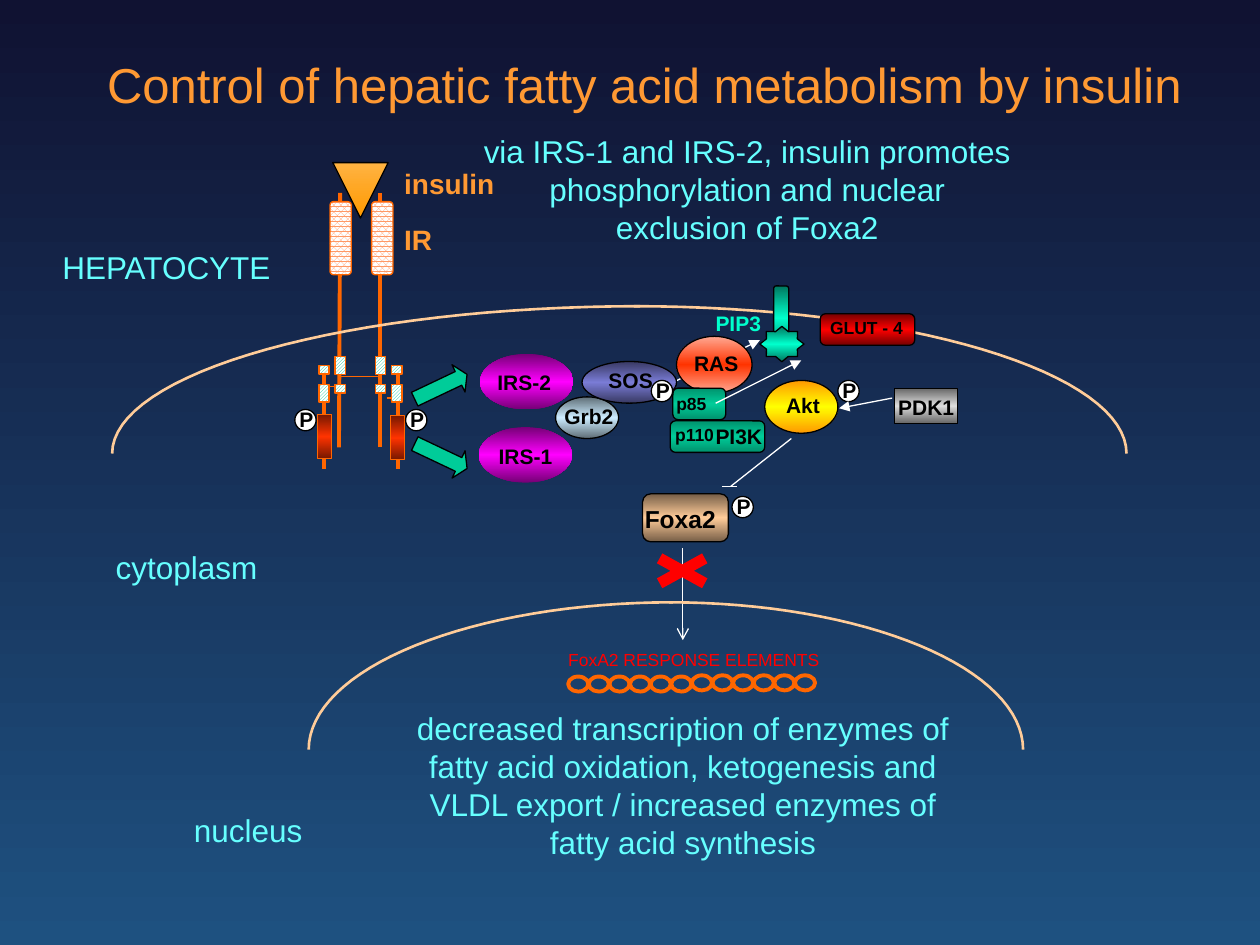
from copy import deepcopy
from math import cos, pi, sin

from lxml.etree import SubElement
from pptx import Presentation
from pptx.dml.color import RGBColor as RGB
from pptx.enum.dml import MSO_PATTERN as PATTERN
from pptx.enum.shapes import MSO_CONNECTOR as CONN, MSO_SHAPE as SH
from pptx.enum.text import MSO_ANCHOR as ANCHOR, MSO_AUTO_SIZE as AUTO, PP_ALIGN as ALIGN
from pptx.oxml.ns import qn
from pptx.util import Pt

C = {
    "navy": "101232", "blue": "1E5180", "title": "FF9933", "aqua": "66FFFF",
    "orange": "FF6600", "peach": "FFCC99", "black": "000000", "white": "FFFFFF",
    "red": "FF0000", "dark red": "760000", "rust": "761800", "scarlet": "FF3300",
    "salmon": "FFA892", "coral": "FF9966", "green": "00CC99", "dark green": "00926D",
    "mint": "00FFCC", "dark mint": "00765E", "purple": "760076", "magenta": "FF00FF",
    "slate": "5E6D76", "ice": "CCECFF", "indigo": "383963", "violet": "7A7CD6",
    "amber": "FF9900", "light amber": "FFB342", "yellow": "FFFF00",
    "gray": "666666", "silver": "DDDDDD", "brown": "765E47",
}
C = {name: RGB.from_string(code) for name, code in C.items()}


def write(sp, text, size=12, color="black", bold=True, align=ALIGN.LEFT, wrap=False):
    tf = sp.text_frame
    tf.word_wrap = wrap
    tf.auto_size = AUTO.SHAPE_TO_FIT_TEXT
    tf.vertical_anchor = ANCHOR.TOP
    p = tf.paragraphs[0]
    p.alignment = align
    r = p.add_run()
    r.text = text
    r.font.name, r.font.size, r.font.bold = "Arial", Pt(size), bold
    r.font.color.rgb = C[color]


def connect(x1, y1, x2, y2, color="white", width=0.75, arrow=None):
    line = s.shapes.add_connector(CONN.STRAIGHT, Pt(x1), Pt(y1), Pt(x2), Pt(y2))
    line.line.color.rgb = C[color]
    line.line.width = Pt(width)
    sppr = line._element.spPr
    if arrow:
        SubElement(sppr.find(qn("a:ln")), qn("a:tailEnd"), type=arrow)
    SubElement(sppr, qn("a:effectLst"))


prs = Presentation()
prs.slide_width, prs.slide_height = Pt(720), Pt(540)
s = prs.slides.add_slide(prs.slide_layouts[5])

# Background
bg = s.background.fill
bg.gradient()
bg.gradient_angle = 270
for stop, color, position in zip(bg.gradient_stops, ("navy", "blue"), (0, 1)):
    stop.color.rgb = C[color]
    stop.position = position

# Title
title = s.shapes.title
title.left, title.top, title.width, title.height = Pt(54), Pt(27.4), Pt(636.5), Pt(41)
write(title, "Control of hepatic fatty acid metabolism by insulin",
      size=28, color="title", bold=False)

# Receptor strands, and the arrows that run behind other shapes
for x1, y1, x2, y2, width in [
    (217.4, 255.6, 217.4, 110.2, 2.25), (193.7, 255.6, 194.4, 110.2, 2.25),
    (227.5, 208.8, 227.5, 267.8, 2.25), (185, 208.8, 185, 267.8, 2.25),
    (221, 227.5, 224.6, 227.5, 0.75), (187.9, 221, 191.5, 221, 0.75),
    (194.4, 215.3, 218.2, 215.3, 0.75),
]:
    connect(x1, y1, x2, y2, "orange", width)
connect(385.2, 218.2, 434.2, 194.4, arrow="triangle")
connect(390.2, 313.2, 390.2, 365.8, arrow="arrow")

# Cell and nuclear membranes: quarter ellipses (crown x, foot x, crown y)
STEPS, RISE = 32, 84.2
for crown, foot, top in [(365.8, 64.1, 175), (362.2, 643.7, 175),
                         (384.5, 176.4, 344.2), (382.3, 584.6, 344.2)]:
    points = [(Pt(crown + (foot - crown) * sin(a)), Pt(top + RISE * (1 - cos(a))))
              for a in (pi / 2 * i / STEPS for i in range(STEPS + 1))]
    builder = s.shapes.build_freeform(*points[0])
    builder.add_line_segments(points[1:], close=False)
    arc = builder.convert_to_shape()
    arc.shadow.inherit = False
    arc.fill.background()
    arc.line.color.rgb = C["peach"]
    arc.line.width = Pt(1.5)

# Shapes: kind, left, top, width, height, fill, line colour, line width, rotation, adjustments
# A fill is None, a colour, a list of gradient colours or a (pattern, fore, back) tuple
HATCH = (PATTERN.DARK_UPWARD_DIAGONAL, "green", "white")
DOTS = (PATTERN.PERCENT_75, "coral", "white")
GREEN = ["dark green", "green", "dark green"]
MINT = ["dark mint", "mint", "dark mint"]
PURPLE = ["purple", "magenta", "purple"]
EDGE = ("black", 0.75, 0, [])
ORANGE = ("orange", 0.75, 0, [])
BARE = (None, 0, 0, [])
BADGES = [(372.2, 217.4), (168.5, 234), (231.8, 234), (478.8, 217.4), (418.3, 283.7)]

shapes = []
for kinase_x, outer_x, inner_x, kinase_y in [(223.2, 223.9, 214.6, 237.6),
                                           (181.4, 182.2, 191.5, 236.9)]:
    shapes.append((SH.RECTANGLE, kinase_x, kinase_y, 7.9, 25.2,
                   ["rust", "scarlet", "rust"], *ORANGE))
    for x, y, h in [(outer_x, 219.6, 10.1), (outer_x, 208.8, 5),
                    (inner_x, 203.8, 10.1), (inner_x, 219.6, 5)]:
        shapes.append((SH.RECTANGLE, x, y, 5.8, h, HATCH, *ORANGE))
shapes += [
    (SH.ISOSCELES_TRIANGLE, 190.1, 92.9, 31.7, 31.7, ["amber", "light amber"],
     "black", 0.75, 180, []),
    (SH.ROUNDED_RECTANGLE, 212.4, 115.2, 12.2, 41.8, DOTS, *ORANGE),
    (SH.ROUNDED_RECTANGLE, 188.6, 115.2, 12.2, 41.8, DOTS, *ORANGE),
    (SH.OVAL, 274.3, 202.3, 53.3, 31.7, PURPLE, *BARE),
    (SH.OVAL, 273.6, 244.1, 53.3, 31.7, PURPLE, *BARE),
    (SH.OVAL, 386.6, 192.2, 43.2, 32.4, ["salmon", "scarlet", "salmon"], *EDGE),
    (SH.ROUNDED_RECTANGLE, 384.5, 221.8, 30.2, 18, GREEN, *EDGE),
    (SH.ROUNDED_RECTANGLE, 383, 240.5, 54, 18, GREEN, *EDGE),
    (SH.OVAL, 317.5, 226.8, 36, 23.8, ["slate", "ice", "slate"], *EDGE),
    (SH.OVAL, 332.6, 206.6, 54, 23.8, ["indigo", "violet", "indigo"], *EDGE),
    (SH.RIGHT_ARROW, 235.4, 252, 33.1, 17.3, "green", "black", 0.75, 25.4, [0.5, 0.31]),
    (SH.RIGHT_ARROW, 235.4, 212.4, 33.1, 17.3, "green", "black", 0.75, 334.6, [0.5, 0.31]),
    (SH.ROUNDED_RECTANGLE, 468.7, 179.3, 54, 18, ["dark red", "red", "dark red"], *EDGE),
    (SH.OVAL, 437, 217.4, 41.8, 30.2, ["amber", "yellow", "amber"], *EDGE),
    (SH.RECTANGLE, 511.2, 221.8, 36, 20.2, ["gray", "silver", "gray"], *EDGE),
    (SH.ROUNDED_RECTANGLE, 367.2, 282.2, 49, 27.4, ["brown", "peach", "brown"], *EDGE),
    (SH.MATH_MULTIPLY, 365, 312.5, 49.7, 27.4, "red", *BARE),
    (SH.ROUNDED_RECTANGLE, 442.1, 163.4, 8.6, 36.7, MINT, *EDGE),
    (SH.STAR_8_POINT, 434.2, 186.5, 25.2, 20.2, MINT, "black", 0.75, 0, [0.38]),
]
shapes += [(SH.OVAL, x, y, 12.2, 12.2, "white", *EDGE) for x, y in BADGES]
# Chain of response elements
shapes += [(SH.OVAL, 324.7 + 11.78 * i, 386.6 if i < 6 else 385.9, 11.5, 8.6, None,
            "orange", 2.25, 0, []) for i in range(12)]

for kind, x, y, w, h, fill, edge, width, turn, adjust in shapes:
    sp = s.shapes.add_shape(kind, Pt(x), Pt(y), Pt(w), Pt(h))
    sp.shadow.inherit = False
    sp.rotation = turn
    for i, value in enumerate(adjust):
        sp.adjustments[i] = value
    if fill is None:
        sp.fill.background()
    elif isinstance(fill, str):
        sp.fill.solid()
        sp.fill.fore_color.rgb = C[fill]
    elif isinstance(fill, tuple):
        sp.fill.patterned()
        sp.fill.pattern = fill[0]
        sp.fill.fore_color.rgb, sp.fill.back_color.rgb = C[fill[1]], C[fill[2]]
    else:
        sp.fill.gradient()
        sp.fill.gradient_angle = 270
        stops = sp._element.spPr.find(".//" + qn("a:gsLst"))
        if len(fill) == 3:
            stops.append(deepcopy(stops[0]))
        for i, stop in enumerate(sp.fill.gradient_stops):
            stop.color.rgb = C[fill[i]]
            stop.position = i / (len(fill) - 1)
    if edge:
        sp.line.color.rgb = C[edge]
        sp.line.width = Pt(width)
    else:
        sp.line.fill.background()

# Signalling arrows and the inhibition bar
connect(409, 230.4, 457.9, 205.9, arrow="triangle")
connect(509.8, 227.5, 479.5, 233.3, arrow="triangle")
connect(452.2, 250.6, 417.6, 277.9)
connect(412.6, 277.9, 421.2, 277.9)

# Labels
HEAD = dict(size=16, color="title")
SMALL = dict(size=10)
BODY = dict(size=18, color="aqua", bold=False, align=ALIGN.CENTER, wrap=True)
labels = [
    ("insulin", 223.9, 91.4, 66.2, 26.6, HEAD),
    ("IR", 223.9, 123.8, 30.2, 26.6, HEAD),
    ("IRS-2", 277.2, 207.4, 45.4, 21.6, {}),
    ("IRS-1", 277.9, 249.8, 45.4, 21.6, {}),
    ("RAS", 389.5, 196.6, 39.6, 21.6, {}),
    ("PI3K", 401.8, 238.3, 41, 21.6, {}),
    ("p85", 379.4, 221, 31.7, 19.4, SMALL),
    ("p110", 378.7, 239, 37.4, 19.4, SMALL),
    ("Grb2", 315.4, 226.8, 42.5, 21.6, {}),
    ("SOS", 340.6, 206.6, 39.6, 21.6, {}),
    ("GLUT - 4", 467.3, 177.8, 56.2, 19.4, SMALL),
    ("Akt", 442.1, 221, 33.8, 21.6, {}),
    ("PDK1", 506.2, 221.8, 47.5, 21.6, dict(wrap=True)),
    ("Foxa2", 361.4, 284.4, 55.4, 24.5, dict(size=14)),
    ("PIP3", 401.8, 174.2, 40.3, 21.6, dict(color="mint")),
    ("FoxA2 RESPONSE ELEMENTS", 312.5, 367.2, 167.8, 19.4,
     {**BODY, "size": 10, "color": "red"}),
    ("decreased transcription of enzymes of fatty acid oxidation, ketogenesis and "
     "VLDL export / increased enzymes of fatty acid synthesis",
     230.4, 401.8, 319.7, 94.3, BODY),
    ("HEPATOCYTE", 16.6, 138.2, 157, 28.8, BODY),
    ("cytoplasm", 28.1, 309.6, 157, 28.8, BODY),
    ("nucleus", 78.5, 460.1, 126.7, 28.8, BODY),
    ("via IRS-1 and IRS-2, insulin promotes phosphorylation and nuclear exclusion of Foxa2",
     269.3, 72, 315.4, 72.7, BODY),
]
labels += [("P", x - 4.5, y - 5, 22.3, 21.6, {}) for x, y in BADGES]
for text, x, y, w, h, style in labels:
    write(s.shapes.add_textbox(Pt(x), Pt(y), Pt(w), Pt(h)), text, **style)

prs.save("out.pptx")
